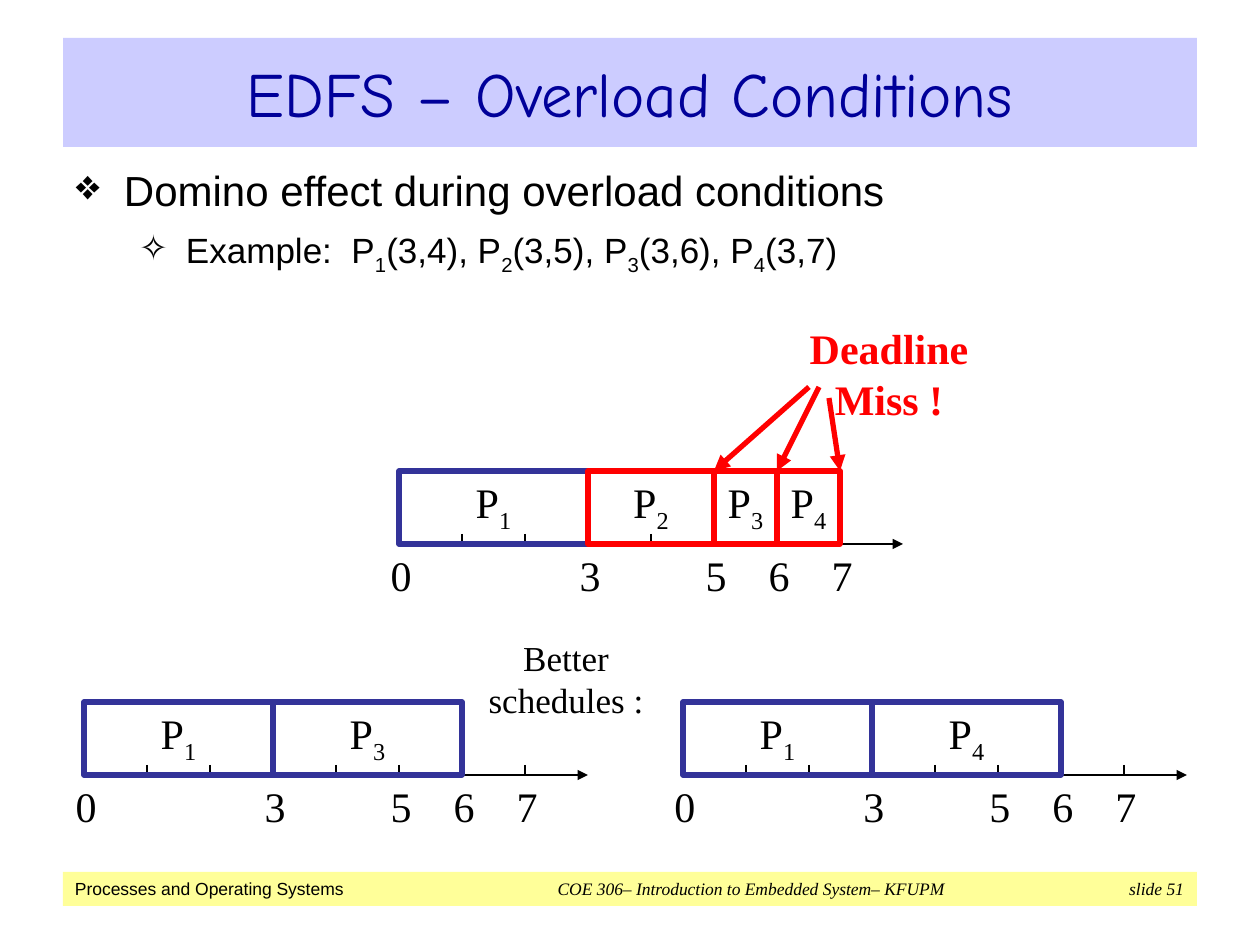
from lxml import etree
from pptx import Presentation
from pptx.dml.color import RGBColor
from pptx.enum.shapes import MSO_CONNECTOR, MSO_SHAPE
from pptx.enum.text import MSO_ANCHOR, PP_ALIGN
from pptx.oxml.ns import qn
from pptx.util import Emu, Pt

BLACK = RGBColor(0x00, 0x00, 0x00)
RED = RGBColor(0xFF, 0x00, 0x00)
NAVY = RGBColor(0x00, 0x00, 0x99)
INDIGO = RGBColor(0x33, 0x33, 0x99)
LAVENDER = RGBColor(0xCC, 0xCC, 0xFF)
YELLOW = RGBColor(0xFF, 0xFF, 0x99)

SANS, SERIF, COMIC = "Arial", "Times New Roman", "Comic Neue"
RECTANGLE = MSO_SHAPE.RECTANGLE
STRAIGHT = MSO_CONNECTOR.STRAIGHT
CENTER, LEFT = PP_ALIGN.CENTER, PP_ALIGN.LEFT
MIDDLE = MSO_ANCHOR.MIDDLE

TITLE_ONLY = 5
TIME_UNIT = 63
BAR_HEIGHT = 73
TICK_HEIGHT = 10
LAST_TICK = 7
AXIS_UNITS = 8
MARKS = (0, 3, 5, 6, 7)


def px(length):
    return Emu(round(length * 914400 / 126))


def write(paragraph, text, font=SERIF, size=24, color=BLACK, bold=False, italic=False):
    """Append text to the paragraph; parts between tildes become subscripts."""
    for index, part in enumerate(text.split("~")):
        if not part:
            continue
        run = paragraph.add_run()
        run.text = part
        run.font.name = font
        run.font.size = Pt(size)
        run.font.color.rgb = color
        run.font.bold = bold
        run.font.italic = italic
        if index % 2:
            run.font._element.set("baseline", "-25000")


def clear_insets(frame):
    frame.margin_left = frame.margin_right = frame.margin_top = frame.margin_bottom = 0


class SlideBuilder:
    def __init__(self, presentation):
        self.slide = presentation.slides.add_slide(presentation.slide_layouts[TITLE_ONLY])
        self.shapes = self.slide.shapes

    def title(self, text, left, top, width, height):
        title = self.shapes.title
        title.left, title.top = px(left), px(top)
        title.width, title.height = px(width), px(height)
        title.fill.solid()
        title.fill.fore_color.rgb = LAVENDER
        title.text_frame.vertical_anchor = MIDDLE
        paragraph = title.text_frame.paragraphs[0]
        paragraph.alignment = CENTER
        write(paragraph, text, font=COMIC, size=36, color=NAVY)

    def rectangle(self, left, top, width, height, fill=None, line=None):
        shape = self.shapes.add_shape(RECTANGLE, px(left), px(top), px(width), px(height))
        shape.shadow.inherit = False
        if fill is None:
            shape.fill.background()
        else:
            shape.fill.solid()
            shape.fill.fore_color.rgb = fill
        if line is None:
            shape.line.fill.background()
        else:
            shape.line.color.rgb = line
            shape.line.width = Pt(3)
        return shape

    def line(self, start, end, color=BLACK, width=0.75, arrow=False):
        connector = self.shapes.add_connector(STRAIGHT, *map(px, start + end))
        connector.line.color.rgb = color
        connector.line.width = Pt(width)
        if arrow:
            etree.SubElement(connector.line._get_or_add_ln(), qn("a:tailEnd"), type="triangle")
        etree.SubElement(connector._element.spPr, qn("a:effectLst"))

    def text_frame(self, left, top, width, height):
        box = self.shapes.add_textbox(px(left), px(top), px(width), px(height))
        frame = box.text_frame
        frame.word_wrap = True
        clear_insets(frame)
        return frame

    def label(self, text, left, top, width, height, **text_format):
        paragraph = self.text_frame(left, top, width, height).paragraphs[0]
        paragraph.alignment = CENTER
        write(paragraph, text, **text_format)

    def bullets(self, items, left, top, width, height):
        """Each item is text, size, bullet character, text indent and hanging indent."""
        frame = self.text_frame(left, top, width, height)
        for level, (text, size, character, indent, hanging) in enumerate(items):
            paragraph = frame.add_paragraph() if level else frame.paragraphs[0]
            paragraph.level = level
            paragraph.space_before = Pt(size * 0.4)
            properties = paragraph._p.get_or_add_pPr()
            properties.set("marL", str(px(indent)))
            properties.set("indent", str(-px(hanging)))
            etree.SubElement(properties, qn("a:buChar"), char=character)
            write(paragraph, text, font=SANS, size=size)

    def footer(self, topic, course, number, left, top, width, height):
        shape = self.rectangle(left, top, width, height, fill=YELLOW)
        frame = shape.text_frame
        clear_insets(frame)
        frame.margin_left = px(12)
        frame.vertical_anchor = MIDDLE
        paragraph = frame.paragraphs[0]
        paragraph.alignment = LEFT
        tabs = etree.SubElement(paragraph._p.get_or_add_pPr(), qn("a:tabLst"))
        for position, alignment in ((676, "ctr"), (1109, "r")):
            etree.SubElement(tabs, qn("a:tab"), pos=str(px(position)), algn=alignment)
        write(paragraph, topic, font=SANS, size=10)
        write(paragraph, f"\t{course}\t{number}", size=10, italic=True)

    def schedule(self, origin, top, jobs):
        """Draw a time axis; each job is process, start, duration and outline colour."""
        axis = top + BAR_HEIGHT
        self.line((origin, axis), (origin + AXIS_UNITS * TIME_UNIT, axis), arrow=True)
        for time in range(LAST_TICK + 1):
            x = origin + time * TIME_UNIT
            self.line((x, axis - TICK_HEIGHT), (x, axis))
        for process, start, duration, color in jobs:
            left, width = origin + start * TIME_UNIT, duration * TIME_UNIT
            self.rectangle(left, top, width, BAR_HEIGHT, line=color)
            self.label(f"P~{process}~", left, top + 6, width, 52)
        for time in MARKS:
            self.label(str(time), origin + time * TIME_UNIT - 21, axis + 6, 46, 50)


def main():
    presentation = Presentation()
    presentation.slide_width, presentation.slide_height = px(1260), px(945)
    builder = SlideBuilder(presentation)

    builder.footer("Processes and Operating Systems",
                   "COE 306– Introduction to Embedded System– KFUPM",
                   "slide 51", 63, 872, 1134, 34)
    builder.title("EDFS – Overload Conditions", 63, 38, 1134, 109)
    builder.bullets([
        ("Domino effect during overload conditions", 24, "❖", 48, 48),
        ("Example:  P~1~(3,4), P~2~(3,5), P~3~(3,6), P~4~(3,7)", 20, "✧", 110, 47),
    ], 76, 164, 1108, 120)

    builder.schedule(399, 471, [(1, 0, 3, INDIGO), (2, 3, 2, RED), (3, 5, 1, RED), (4, 6, 1, RED)])
    builder.label("Deadline Miss !", 798, 323, 182, 100, color=RED, bold=True)
    for start, end in (((809, 387), (714, 471)),
                       ((819, 387), (777, 471)),
                       ((829, 398), (840, 471))):
        builder.line(start, end, color=RED, width=3, arrow=True)

    builder.label("Better schedules :", 476, 637, 180, 84, size=20)
    for origin, second_process in ((84, 3), (683, 4)):
        builder.schedule(origin, 702, [(1, 0, 3, INDIGO), (second_process, 3, 3, INDIGO)])

    presentation.save("out.pptx")


if __name__ == "__main__":
    main()
